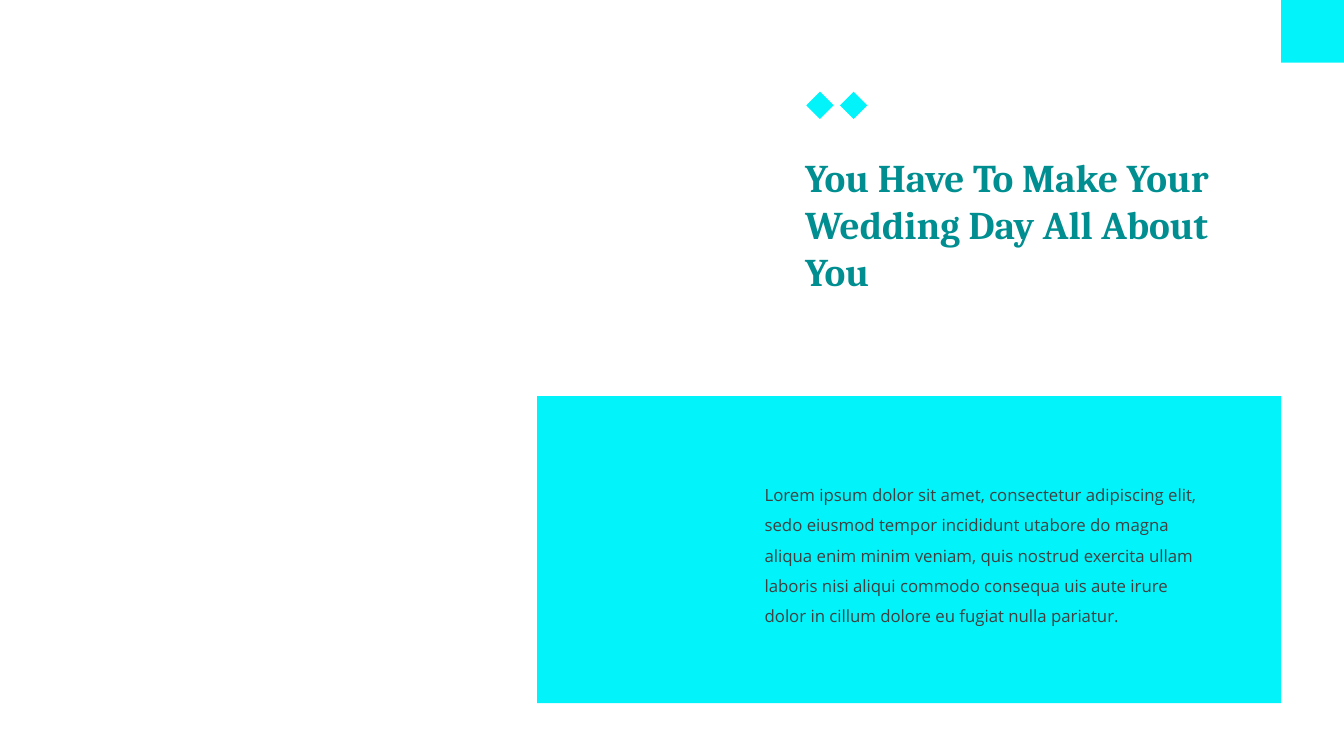
from pptx import Presentation
from pptx.dml.color import RGBColor
from pptx.enum.shapes import MSO_SHAPE
from pptx.enum.text import MSO_AUTO_SIZE
from pptx.util import Pt

RECT = MSO_SHAPE.RECTANGLE
GROW = MSO_AUTO_SIZE.SHAPE_TO_FIT_TEXT
WIDE, HIGH = 960, 540
CYAN, TEAL, GRAY = "02F3F9", "018E91", "404040"

TITLE = "You Have To Make Your Wedding Day All About You"
BODY = (
    "Lorem ipsum dolor sit amet, consectetur adipiscing elit, "
    "sedo eiusmod tempor incididunt utabore do magna aliqua enim "
    "minim veniam, quis nostrud exercita ullam laboris nisi aliqui "
    "commodo consequa uis aute irure dolor in cillum dolore eu "
    "fugiat nulla pariatur."
)


def color(code):
    return RGBColor.from_string(code)


def block(shapes, x, y, w, h, turn=0):
    """Add a plain cyan rectangle."""
    shape = shapes.add_shape(RECT, Pt(x), Pt(y), Pt(w), Pt(h))
    shape.shadow.inherit = False
    shape.fill.solid()
    shape.fill.fore_color.rgb = color(CYAN)
    shape.line.fill.background()
    shape.rotation = turn


def label(shapes, x, y, w, h, text, face, size, ink, bold=False, lead=None):
    """Add a wrapped text box with one paragraph."""
    frame = shapes.add_textbox(Pt(x), Pt(y), Pt(w), Pt(h)).text_frame
    frame.word_wrap = True
    frame.auto_size = GROW
    para = frame.paragraphs[0]
    if lead:
        para.line_spacing = lead
    run = para.add_run()
    run.text = text
    run.font.name = face
    run.font.size = Pt(size)
    run.font.bold = bold
    run.font.color.rgb = color(ink)


def corner(slide, side):
    # Square in the top right corner
    group = slide.shapes.add_group_shape()
    block(group.shapes, WIDE - side, 0, side, side)


def header(slide, x, y, w, h):
    # Pair of diamonds
    side, step = 13.8, 24.1
    group = slide.shapes.add_group_shape()
    for i in range(2):
        block(group.shapes, x + 10.8 + i * step, y, side, side, 45)
    # Title
    top = 37.4
    label(slide.shapes, x, y + top, w, h - top, TITLE, "Cambria", 28, TEAL,
          bold=True)


def panel(slide, x, y, w, h):
    # Cyan ground
    block(slide.shapes, x, y, w, h)
    # Body text
    label(slide.shapes, x + 155.5, y + 52.6, 324, 113.8, BODY, "Open Sans",
          12, GRAY, lead=1.5)


def main():
    deck = Presentation()
    deck.slide_width, deck.slide_height = Pt(WIDE), Pt(HIGH)
    slide = deck.slides.add_slide(deck.slide_layouts[6])
    panel(slide, 383.6, 282.9, 531.6, 219.4)
    corner(slide, 44.8)
    header(slide, 568, 68.4, 306.7, 146.1)
    deck.save("out.pptx")


if __name__ == "__main__":
    main()
